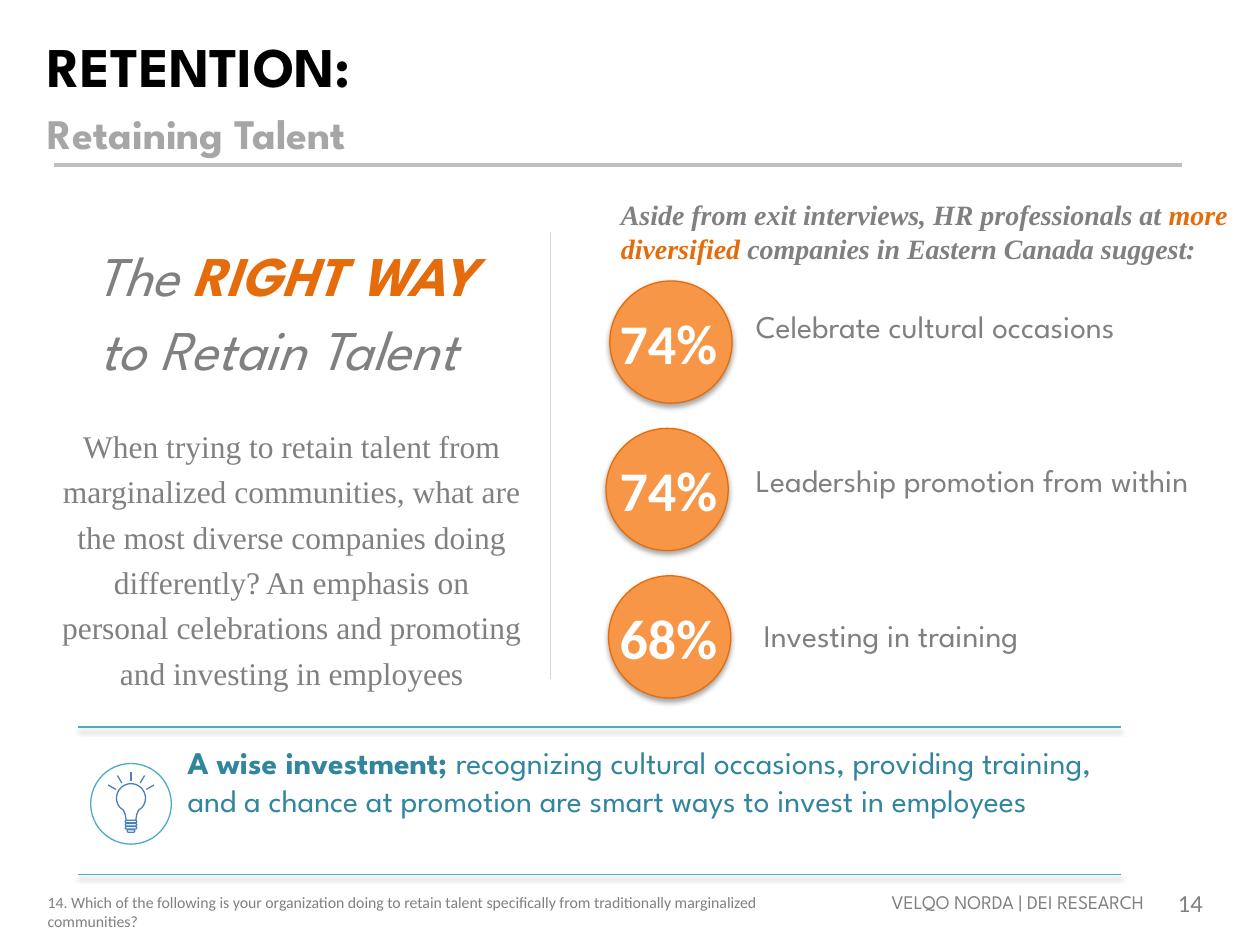
import math
from collections import namedtuple

from lxml import etree
from pptx import Presentation
from pptx import util as u
from pptx.dml.color import RGBColor
from pptx.enum import shapes, text
from pptx.oxml import ns

COLS, ROWS = 100, 75
CELL = u.Inches(10) // COLS
COLORS = {"ink": "000000", "title2": "A6A6A6", "gray": "808080", "rule": "BFBFBF",
          "divider": "D9D9D9", "accent": "E46C0A", "disc": "F79646", "white": "FFFFFF",
          "teal": "4BACC6", "teal_text": "31859C", "bulb": "4B7EBC", "ray": "4F81BD"}
SPARTAN, CALIBRI, TIMES = "League Spartan", "Calibri", "Times New Roman"
LEFT, CENTER, RIGHT = text.PP_ALIGN.LEFT, text.PP_ALIGN.CENTER, text.PP_ALIGN.RIGHT


class Box(namedtuple("Box", "x y w h")):
    """A region in grid cells."""

    def sub(self, x, y, w, h):
        return Box(self.x + x, self.y + y, w, h)

    def emu(self):
        return [round(v * CELL) for v in self]


def rgb(name):
    return RGBColor.from_string(COLORS[name])


def add_effects(sp, shadow=None):
    """Replace inherited effects; shadow is (opacity %, blur pt, distance pt)."""
    effects = etree.SubElement(sp._element.spPr, ns.qn("a:effectLst"))
    if shadow:
        alpha, blur, dist = shadow
        outer = etree.SubElement(effects, ns.qn("a:outerShdw"), blurRad=str(u.Pt(blur)),
                                 dist=str(u.Pt(dist)), dir="5400000", rotWithShape="0")
        color = etree.SubElement(outer, ns.qn("a:srgbClr"), val=COLORS["ink"])
        etree.SubElement(color, ns.qn("a:alpha"), val=str(alpha * 1000))


def add_text(s, box, runs, font, size, color="gray", anchor=text.MSO_ANCHOR.TOP, **para):
    """Add one paragraph; each run is (text, font overrides), None is a line break."""
    tf = s.shapes.add_textbox(*box.emu()).text_frame
    tf.word_wrap, tf.vertical_anchor = True, anchor
    p = tf.paragraphs[0]
    for key, value in para.items():
        setattr(p, key, value)
    for run in runs:
        if run is None:
            p.add_line_break()
            continue
        words, changes = run
        r = p.add_run()
        r.text = words
        style = {"name": font, "size": size, "color": color, **changes}
        r.font.color.rgb = rgb(style.pop("color"))
        style["size"] = u.Pt(style["size"])
        for key, value in style.items():
            setattr(r.font, key, value)


def style_shape(sp, fill, line, shadow=None):
    sp.fill.solid()
    sp.fill.fore_color.rgb = rgb(fill)
    sp.line.color.rgb = rgb(line)
    sp.line.width = u.Pt(0.75)
    add_effects(sp, shadow)


def add_shape(s, kind, box, fill, line, shadow=None, adj=()):
    sp = s.shapes.add_shape(kind, *box.emu())
    for i, value in enumerate(adj):
        sp.adjustments[i] = value
    style_shape(sp, fill, line, shadow)


def add_line(s, x1, y1, x2, y2, color, width, shadow=None):
    ends = [round(v * CELL) for v in (x1, y1, x2, y2)]
    line = s.shapes.add_connector(shapes.MSO_CONNECTOR.STRAIGHT, *ends)
    line.line.color.rgb = rgb(color)
    line.line.width = u.Pt(width)
    add_effects(line, shadow)


def header(s, box):
    add_text(s, box, [("RETENTION:", {}), None,
                      ("Retaining Talent", {"size": 24, "color": "title2", "bold": True})],
             SPARTAN, 32, "ink", text.MSO_ANCHOR.MIDDLE, line_spacing=u.Pt(34))
    s.shapes[-1].text_frame.paragraphs[0].runs[0].font.bold = True
    add_line(s, box.x + 1.5, box.y + 10.9, box.x + 91, box.y + 10.9, "rule", 2)


def message(s, box):
    """Headline and explanation, closed by a vertical divider."""
    add_text(s, box.sub(0.5, 0, 36.5, 12.4),
             [("The ", {}), ("RIGHT WAY ", {"color": "accent", "bold": True}),
              ("to Retain Talent ", {})],
             SPARTAN, 32, alignment=CENTER, line_spacing=1.1, space_after=u.Pt(30))
    for r in s.shapes[-1].text_frame.paragraphs[0].runs:
        r.font.italic = True
    add_text(s, box.sub(0, 14.7, 38.5, 22.5),
             [("When trying to retain talent from marginalized communities, what are the most "
               "diverse companies doing differently? An emphasis on personal celebrations and "
               "promoting and investing in employees", {})],
             TIMES, 18, alignment=CENTER, line_spacing=1.2)
    x = box.x + box.w
    add_line(s, x, box.y + 0.3, x, box.y + box.h, "divider", 0.75)


def suggestions(s, box):
    bold = {"bold": True, "italic": True}
    add_text(s, box.sub(2.8, 0, 50.6, 6.4),
             [("Aside from exit interviews, HR professionals at ", bold),
              ("more diversified ", {**bold, "color": "accent"}),
              ("companies in Eastern Canada suggest:", bold)], TIMES, 16)
    items = [("74%", "Celebrate cultural occasions", 2.9, 1.6),
             ("74%", "Leadership promotion from within", 2.6, 2.1),
             ("68%", " Investing in training", 2.8, 2.7)]
    pitch = 11.7
    for i, (share, label, disc_x, label_y) in enumerate(items):
        row = box.sub(0, 7.1 + i * pitch, box.w, pitch)
        add_shape(s, shapes.MSO_SHAPE.OVAL, row.sub(disc_x, 0, 9.7, 9.7),
                  "disc", "accent", (35, 3.1, 1.8))
        add_text(s, row.sub(0, 1.7, 15.1, 6.4), [(share, {"bold": True})],
                 CALIBRI, 32, "white", alignment=CENTER)
        add_text(s, row.sub(13.5, label_y, 36.5, 7.1), [(label, {})], SPARTAN, 18)


def light_bulb(s, box):
    add_shape(s, shapes.MSO_SHAPE.OVAL, box, "white", "teal")
    cx, cy, radius = box.x + box.w / 2, box.y + 2.75, 1.15
    angles = [math.radians(a) for a in range(140, 401, 10)]
    glass = [(cx + radius * math.cos(a), cy + radius * math.sin(a)) for a in angles]
    neck = [(cx + 0.6, cy + 0.95), (cx + 0.45, cy + 1.3), (cx + 0.35, cy + 2.0),
            (cx - 0.35, cy + 2.0), (cx - 0.45, cy + 1.3), (cx - 0.6, cy + 0.95)]
    points = [(round(x * CELL), round(y * CELL)) for x, y in glass + neck]
    outline = s.shapes.build_freeform(*points[0])
    outline.add_line_segments(points[1:], close=True)
    style_shape(outline.convert_to_shape(), "white", "bulb")
    for i in range(3):
        add_shape(s, shapes.MSO_SHAPE.ROUNDED_RECTANGLE,
                  Box(cx - 0.45, box.y + 4.5 + i * 0.25, 0.9, 0.2), "white", "bulb", adj=[0.5])
    add_shape(s, shapes.MSO_SHAPE.ROUND_2_SAME_RECTANGLE,
              Box(cx - 0.3, box.y + 5.25, 0.6, 0.2), "white", "bulb", adj=[0, 0.5])
    for degrees in (-150, -121, -90, -59, -30):
        dx, dy = math.cos(math.radians(degrees)), math.sin(math.radians(degrees))
        add_line(s, cx + 1.4 * dx, cy + 1.4 * dy, cx + 2.1 * dx, cy + 2.1 * dy, "ray", 0.75)


def takeaway(s, box):
    for y in (box.y, box.y + box.h):
        add_line(s, box.x, y, box.x + box.w, y, "teal", 1, (38, 3.1, 1.6))
    add_text(s, box.sub(7.7, 0.8, 76.6, 10.1),
             [("A wise investment; ", {"bold": True}),
              ("recognizing cultural occasions, providing training, and a chance at promotion "
               "are smart ways to invest in employees", {})],
             SPARTAN, 18, "teal_text", space_after=u.Pt(6))
    light_bulb(s, box.sub(1, 2.9, 6.4, 6.4))


def footer(s, box):
    add_text(s, box.sub(0, 0.4, 61.6, 4),
             [("14. Which of the following is your organization doing to retain talent "
               "specifically from traditionally marginalized communities?", {})], CALIBRI, 9)
    add_text(s, box.sub(57.5, 0.2, 31.5, 2.9), [("VELQO NORDA | DEI RESEARCH", {})],
             SPARTAN, 11, alignment=RIGHT)
    add_text(s, box.sub(89.7, 0, 7.5, 2.5), [("14", {})], CALIBRI, 14, alignment=LEFT)


def main():
    prs = Presentation()
    prs.slide_width, prs.slide_height = COLS * CELL, ROWS * CELL
    s = prs.slides.add_slide(prs.slide_layouts[6])
    header(s, Box(2.8, 2.2, 92.7, 11.2))
    message(s, Box(3.9, 18.1, 39.8, 35.8))
    suggestions(s, Box(45.5, 15.2, 53.4, 42.2))
    takeaway(s, Box(6.2, 57.7, 82.8, 11.7))
    footer(s, Box(2.8, 70, 97.2, 5))
    prs.save("out.pptx")


if __name__ == "__main__":
    main()
